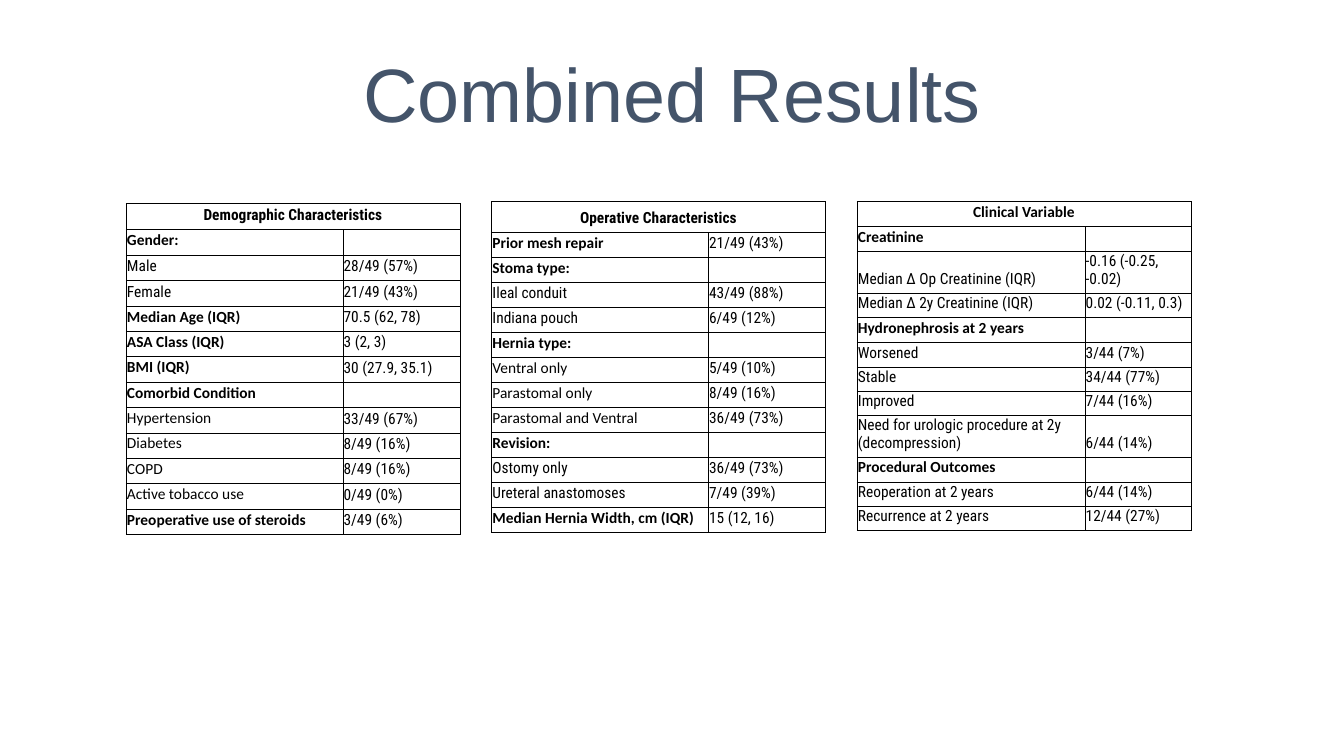
from lxml import etree
from pptx import Presentation
from pptx import util as u
from pptx.dml import color
from pptx.enum import text
from pptx.oxml import ns

BOLD, PLAIN, NARROW = ("Calibri", True), ("Calibri", False), ("Roboto Condensed", False)
NARROW_BOLD = ("Roboto Condensed", True)

DEMOGRAPHIC = [
    ("Gender:", "", BOLD),
    ("Male", "28/49 (57%)", NARROW),
    ("Female", "21/49 (43%)", NARROW),
    ("Median Age (IQR)", "70.5 (62, 78)", BOLD),
    ("ASA Class (IQR)", "3 (2, 3)", BOLD),
    ("BMI (IQR)", "30 (27.9, 35.1)", BOLD),
    ("Comorbid Condition", "", BOLD),
    ("Hypertension", "33/49 (67%)", PLAIN),
    ("Diabetes", "8/49 (16%)", PLAIN),
    ("COPD", "8/49 (16%)", PLAIN),
    ("Active tobacco use", "0/49 (0%)", PLAIN),
    ("Preoperative use of steroids", "3/49 (6%)", BOLD),
]
OPERATIVE = [
    ("Prior mesh repair", "21/49 (43%)", BOLD),
    ("Stoma type:", "", BOLD),
    ("Ileal conduit", "43/49 (88%)", NARROW),
    ("Indiana pouch", "6/49 (12%)", NARROW),
    ("Hernia type:", "", BOLD),
    ("Ventral only", "5/49 (10%)", PLAIN),
    ("Parastomal only", "8/49 (16%)", PLAIN),
    ("Parastomal and Ventral", "36/49 (73%)", PLAIN),
    ("Revision:", "", BOLD),
    ("Ostomy only", "36/49 (73%)", NARROW),
    ("Ureteral anastomoses", "7/49 (39%)", NARROW),
    ("Median Hernia Width, cm (IQR)", "15 (12, 16)", BOLD),
]
CLINICAL = [
    ("Creatinine", "", BOLD),
    ("Median Δ Op Creatinine (IQR)", "-0.16 (-0.25, -0.02)", NARROW),
    ("Median Δ 2y Creatinine (IQR)", "0.02 (-0.11, 0.3)", NARROW),
    ("Hydronephrosis at 2 years", "", BOLD),
    ("Worsened", "3/44 (7%)", NARROW),
    ("Stable", "34/44 (77%)", NARROW),
    ("Improved", "7/44 (16%)", NARROW),
    ("Need for urologic procedure at 2y (decompression)", "6/44 (14%)", NARROW),
    ("Procedural Outcomes", "", BOLD),
    ("Reoperation at 2 years", "6/44 (14%)", NARROW),
    ("Recurrence at 2 years", "12/44 (27%)", NARROW),
]


def rgb(value):
    return color.RGBColor.from_string(value)


class Deck:
    ink, title_ink = "000000", "44546A"
    size, title_size = 11, 54

    def __init__(self, width, height):
        self.prs = Presentation()
        self.prs.slide_width, self.prs.slide_height = u.Cm(width), u.Cm(height)
        self.s = self.prs.slides.add_slide(self.prs.slide_layouts[5])

    def run(self, p, words, font, bold, size, ink):
        r = p.add_run()
        r.text = words
        r.font.name, r.font.bold, r.font.size = font, bold, u.Pt(size)
        r.font.color.rgb = rgb(ink)

    def title(self, words, left, top, width, height):
        sp = self.s.shapes.title
        sp.left, sp.top, sp.width, sp.height = map(u.Cm, (left, top, width, height))
        tf = sp.text_frame
        tf.vertical_anchor = text.MSO_ANCHOR.MIDDLE
        p = tf.paragraphs[0]
        p.alignment, p.line_spacing = text.PP_ALIGN.CENTER, 0.9
        self.run(p, words, "Arial", False, self.title_size, self.title_ink)

    def border(self, cell):
        tc_pr = cell._tc.get_or_add_tcPr()
        for side in ("a:lnL", "a:lnR", "a:lnT", "a:lnB"):
            ln = etree.SubElement(tc_pr, ns.qn(side), w=str(u.Pt(0.5)))
            fill = etree.SubElement(ln, ns.qn("a:solidFill"))
            etree.SubElement(fill, ns.qn("a:srgbClr"), val=self.ink)

    def cell(self, cell, words, style, align=text.PP_ALIGN.LEFT):
        self.border(cell)
        cell.fill.background()
        cell.vertical_anchor = text.MSO_ANCHOR.BOTTOM
        cell.margin_left = cell.margin_right = cell.margin_top = u.Cm(0.02)
        cell.margin_bottom = u.Cm(0.13)
        p = cell.text_frame.paragraphs[0]
        p.alignment = align
        if words:
            self.run(p, words, *style, self.size, self.ink)
        else:
            etree.SubElement(p._p, ns.qn("a:endParaRPr"), sz=str(self.size * 100))

    def table(self, heading, heading_style, rows, left, top, widths, heights):
        frame = self.s.shapes.add_table(
            len(rows) + 1, 2, u.Cm(left), u.Cm(top), u.Cm(sum(widths)), u.Cm(sum(heights)))
        tbl = frame.table
        tbl.first_row = tbl.horz_banding = False
        for column, width in zip(tbl.columns, widths):
            column.width = u.Cm(width)
        for row, height in zip(tbl.rows, heights):
            row.height = u.Cm(height)
        tbl.cell(0, 0).merge(tbl.cell(0, 1))
        self.cell(tbl.cell(0, 0), heading, heading_style, text.PP_ALIGN.CENTER)
        self.cell(tbl.cell(0, 1), "", NARROW)
        for i, (label, value, style) in enumerate(rows, 1):
            self.cell(tbl.cell(i, 0), label, style)
            self.cell(tbl.cell(i, 1), value, NARROW)


def main():
    deck = Deck(33.87, 19.05)
    deck.title("Combined Results", 0, 0.64, 33.87, 3.68)
    left, pitch = 3.18, 9.21
    deck.table("Demographic Characteristics", NARROW_BOLD, DEMOGRAPHIC,
               left, 5.13, (5.46, 2.95), [0.66] + [0.64] * 12)
    deck.table("Operative Characteristics", NARROW_BOLD, OPERATIVE,
               left + pitch, 5.08, (5.46, 2.95), [0.78] + [0.63] * 12)
    two_line = ("Median Δ Op Creatinine (IQR)", "Need for urologic procedure at 2y (decompression)")
    deck.table("Clinical Variable", BOLD, CLINICAL, left + 2 * pitch, 5.08, (5.74, 2.67),
               [0.61] + [1.04 if label in two_line else 0.61 for label, _, _ in CLINICAL])
    deck.prs.save("out.pptx")


if __name__ == "__main__":
    main()
